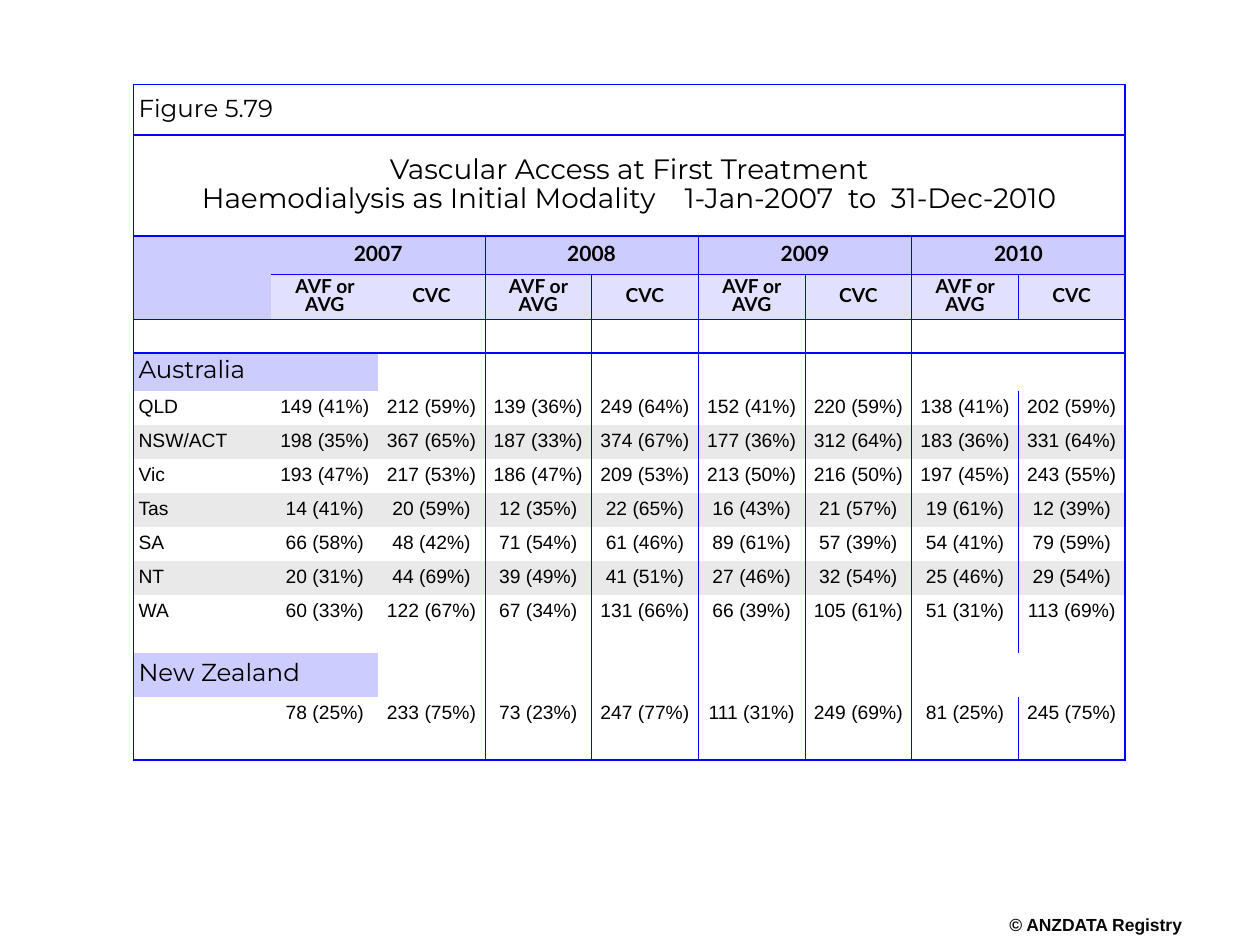
from lxml import etree
from pptx import Presentation
from pptx.dml.color import RGBColor
from pptx.enum.text import MSO_ANCHOR, MSO_AUTO_SIZE, PP_ALIGN
from pptx.oxml.ns import qn
from pptx.util import Emu, Inches, Pt

LEFT, CENTER = PP_ALIGN.LEFT, PP_ALIGN.CENTER
MIDDLE = MSO_ANCHOR.MIDDLE
GROW = MSO_AUTO_SIZE.SHAPE_TO_FIT_TEXT

COLORS = {"text": "000000", "credit": "080808", "rule": "0000FF",
          "head": "CCCCFF", "subhead": "E1E1FF", "band": "E9E9E9"}
GRID_COLS = 1000
GRID_ROWS = 750
PLAIN_TABLE = "{2D5ABB26-0587-4C30-8999-92F81FD0307C}"

COL_WIDTHS = [109.5] + [84.7] * 8
ROW_HEIGHTS = [40, 80.5, 30.5, 35.5, 26.5, 30, 27.5] + [27] * 6 + [19, 35, 27, 23]
# Line widths in points, keyed by the number of the column or row edge
COL_RULES = {0: 1, 3: 0.5, 5: 0.5, 7: 0.75, 9: 1}
ROW_RULES = {0: 1, 1: 1, 2: 1, 3: 0.5, 4: 1, 17: 1}

TITLE = ["Vascular Access at First Treatment",
         "Haemodialysis as Initial Modality    1-Jan-2007  to  31-Dec-2010"]
YEARS = ["2007", "2008", "2009", "2010"]
STATES = [
    ("QLD", "149 (41%)", "212 (59%)", "139 (36%)", "249 (64%)",
     "152 (41%)", "220 (59%)", "138 (41%)", "202 (59%)"),
    ("NSW/ACT", "198 (35%)", "367 (65%)", "187 (33%)", "374 (67%)",
     "177 (36%)", "312 (64%)", "183 (36%)", "331 (64%)"),
    ("Vic", "193 (47%)", "217 (53%)", "186 (47%)", "209 (53%)",
     "213 (50%)", "216 (50%)", "197 (45%)", "243 (55%)"),
    ("Tas", "14 (41%)", "20 (59%)", "12 (35%)", "22 (65%)",
     "16 (43%)", "21 (57%)", "19 (61%)", "12 (39%)"),
    ("SA", "66 (58%)", "48 (42%)", "71 (54%)", "61 (46%)",
     "89 (61%)", "57 (39%)", "54 (41%)", "79 (59%)"),
    ("NT", "20 (31%)", "44 (69%)", "39 (49%)", "41 (51%)",
     "27 (46%)", "32 (54%)", "25 (46%)", "29 (54%)"),
    ("WA", "60 (33%)", "122 (67%)", "67 (34%)", "131 (66%)",
     "66 (39%)", "105 (61%)", "51 (31%)", "113 (69%)"),
]
NEW_ZEALAND = ("", "78 (25%)", "233 (75%)", "73 (23%)", "247 (77%)",
               "111 (31%)", "249 (69%)", "81 (25%)", "245 (75%)")


class Deck:
    def __init__(self):
        self.prs = Presentation()
        self.prs.slide_width, self.prs.slide_height = Inches(10), Inches(7.5)
        self.s = self.prs.slides.add_slide(self.prs.slide_layouts[6])

    def x(self, cols):
        return Emu(round(self.prs.slide_width * cols / GRID_COLS))

    def y(self, rows):
        return Emu(round(self.prs.slide_height * rows / GRID_ROWS))

    def add_lines(self, tf, lines, size, font="Arial", color="text", bold=False,
                  align=CENTER, spacing=0.85, after=0):
        for i, line in enumerate(lines):
            p = tf.add_paragraph() if i else tf.paragraphs[0]
            p.alignment, p.line_spacing = align, spacing
            p.space_after = Pt(after)
            r = p.add_run()
            r.text = line
            r.font.name, r.font.size, r.font.bold = font, Pt(size), bold
            r.font.color.rgb = RGBColor.from_string(COLORS[color])

    def label(self, x, y, w, h, text, **style):
        sp = self.s.shapes.add_textbox(self.x(x), self.y(y), self.x(w), self.y(h))
        tf = sp.text_frame
        tf.margin_left = tf.margin_right = tf.margin_top = tf.margin_bottom = 0
        tf.word_wrap, tf.auto_size = False, GROW
        self.add_lines(tf, [text], **style)

    def table(self, x, y, widths, heights):
        """Add a plain table whose empty cells keep the rows at their height."""
        frame = self.s.shapes.add_table(len(heights), len(widths), self.x(x), self.y(y),
                                        self.x(sum(widths)), self.y(sum(heights)))
        self.tbl = frame.table
        self.tbl.first_row = self.tbl.horz_banding = False
        frame._element.find(".//" + qn("a:tableStyleId")).text = PLAIN_TABLE
        for col, w in zip(self.tbl.columns, widths):
            col.width = self.x(w)
        for row, h in zip(self.tbl.rows, heights):
            row.height = self.y(h)
        for cell in self.tbl.iter_cells():
            cell.margin_left = cell.margin_right = Inches(0.04)
            cell.margin_top = cell.margin_bottom = Inches(0.04)
            cell.vertical_anchor = MIDDLE
            cell.text_frame.paragraphs[0]._p.get_or_add_endParaRPr().set("sz", "600")

    def cell(self, row, col, lines=(), fill=None, rows=1, cols=1, **style):
        cell = self.tbl.cell(row, col)
        if rows * cols > 1:
            cell.merge(self.tbl.cell(row + rows - 1, col + cols - 1))
        if lines:
            self.add_lines(cell.text_frame, lines, **style)
        for r in range(row, row + rows):
            for c in range(col, col + cols):
                self.rules(self.tbl.cell(r, c), row, col, row + rows, col + cols)
        if fill:
            cell.fill.solid()
            cell.fill.fore_color.rgb = RGBColor.from_string(COLORS[fill])
        else:
            cell.fill.background()

    def rules(self, cell, top, left, bottom, right):
        tc_pr = cell._tc.get_or_add_tcPr()
        edges = (("L", COL_RULES, left), ("R", COL_RULES, right),
                 ("T", ROW_RULES, top), ("B", ROW_RULES, bottom))
        for side, widths, edge in edges:
            if edge in widths:
                ln = etree.SubElement(tc_pr, qn("a:ln" + side), w=str(Pt(widths[edge])))
                solid = etree.SubElement(ln, qn("a:solidFill"))
                etree.SubElement(solid, qn("a:srgbClr"), val=COLORS["rule"])

    def data_row(self, row, values, fill=None):
        for col, value in enumerate(values):
            self.cell(row, col, [value] if value else (), fill, size=11, after=14,
                      align=CENTER if col else LEFT)

    def region_row(self, row, name):
        self.cell(row, 0, [name], "head", cols=2, size=14, font="Montserrat",
                  align=LEFT, spacing=0.75)
        for col in range(2, 9):
            self.cell(row, col)


def main():
    deck = Deck()
    deck.label(799, 728, 141, 17, "© ANZDATA Registry", size=10, color="credit", bold=True)

    deck.table(106, 67, COL_WIDTHS, ROW_HEIGHTS)
    deck.cell(0, 0, ["Figure 5.79"], cols=9, size=14, font="Montserrat", align=LEFT)
    deck.cell(1, 0, TITLE, cols=9, size=16, font="Montserrat")

    deck.cell(2, 0, fill="head", rows=2)
    for i, year in enumerate(YEARS):
        col = 1 + 2 * i
        deck.cell(2, col, [year], "head", cols=2, size=12, font="Lato", bold=True)
        for j, access in enumerate(["AVF or AVG", "CVC"]):
            deck.cell(3, col + j, [access], "subhead", size=11, font="Lato",
                      bold=True, spacing=0.75)

    deck.cell(4, 0, cols=2)
    for col in range(2, 9):
        deck.cell(4, col)
    deck.region_row(5, "Australia")
    for i, values in enumerate(STATES):
        deck.data_row(6 + i, values, "band" if i % 2 else None)
    deck.data_row(13, [""] * 9)
    deck.region_row(14, "New Zealand")
    deck.data_row(15, NEW_ZEALAND)
    deck.data_row(16, [""] * 9)

    deck.prs.save("out.pptx")


if __name__ == "__main__":
    main()
